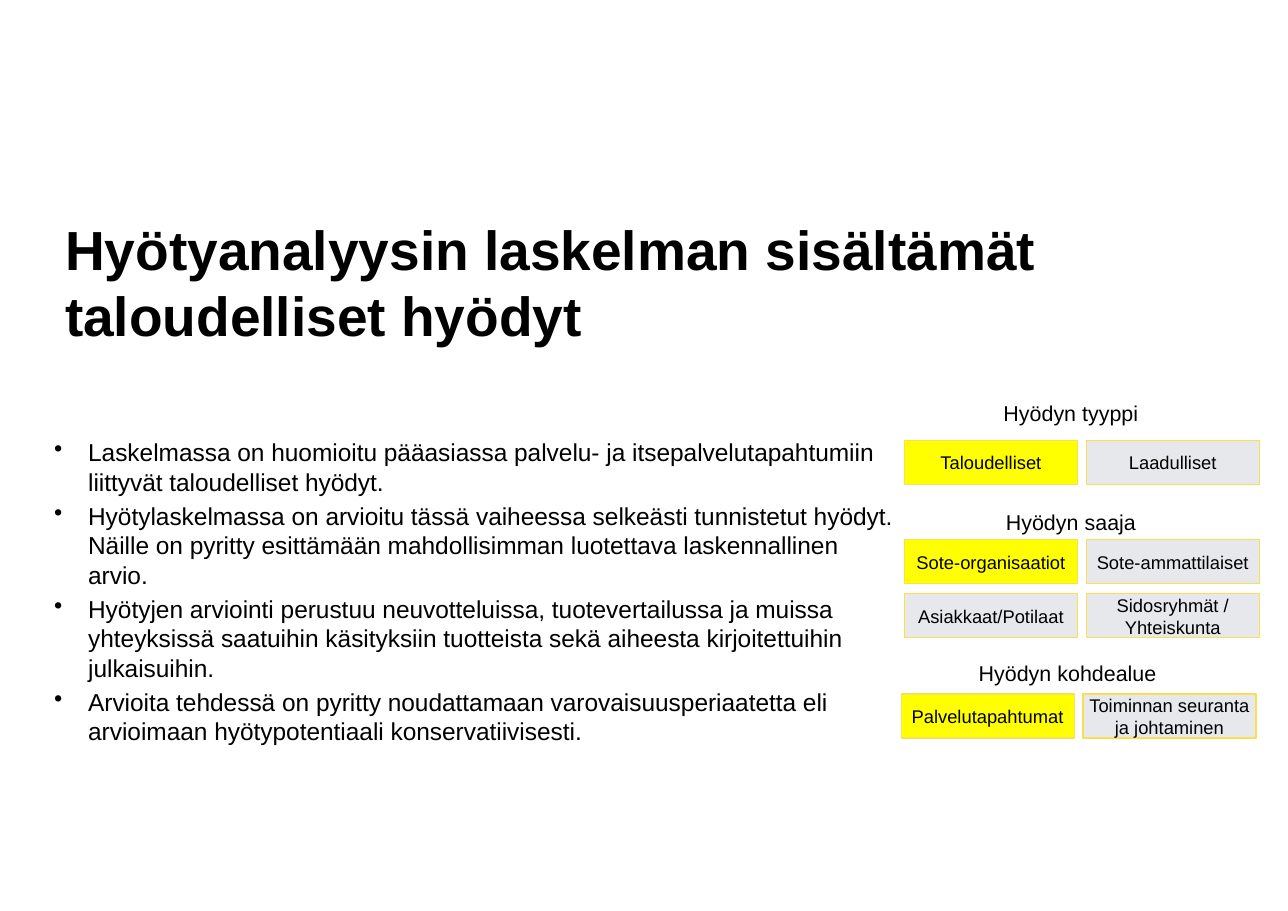
from pptx import Presentation
from pptx import util as u
from pptx.dml.color import RGBColor
from pptx.enum import shapes, text
from pptx.oxml import parse_xml
from pptx.oxml.ns import nsdecls

PX = 9144  # 100 px to the inch
BLACK = RGBColor(0x00, 0x00, 0x00)
YELLOW = RGBColor(0xFF, 0xFF, 0x00)
GREY = RGBColor(0xE7, 0xE8, 0xEC)
GOLD = RGBColor(0xFB, 0xDF, 0x53)

TITLE = "Hyötyanalyysin laskelman sisältämät taloudelliset hyödyt"
BULLETS = [
    "Laskelmassa on huomioitu pääasiassa palvelu- ja itsepalvelutapahtumiin liittyvät taloudelliset hyödyt.",
    "Hyötylaskelmassa on arvioitu tässä vaiheessa selkeästi tunnistetut hyödyt. "
    "Näille on pyritty esittämään mahdollisimman luotettava laskennallinen arvio.",
    "Hyötyjen arviointi perustuu neuvotteluissa, tuotevertailussa ja muissa yhteyksissä "
    "saatuihin käsityksiin tuotteista sekä aiheesta kirjoitettuihin julkaisuihin.",
    "Arvioita tehdessä on pyritty noudattamaan varovaisuusperiaatetta eli "
    "arvioimaan hyötypotentiaali konservatiivisesti.",
]
# Group left and top, heading, heading width, drop from heading to cells, rows
BENEFIT_GROUPS = [
    (821, 358, "Hyödyn tyyppi", 143, 42, [("Taloudelliset", "Laadulliset")]),
    (821, 457, "Hyödyn saaja", 139, 33, [("Sote-organisaatiot", "Sote-ammattilaiset"),
                                         ("Asiakkaat/Potilaat", "Sidosryhmät / Yhteiskunta")]),
    (818, 594, "Hyödyn kohdealue", 182, 36,
     [("Palvelutapahtumat", "Toiminnan seuranta ja johtaminen")]),
]
INCLUDED = {"Taloudelliset", "Sote-organisaatiot", "Palvelutapahtumat"}
CELL_WIDTH, CELL_HEIGHT = 157, 40
COLUMN_STEP, ROW_STEP = 165, 49
HEADING_CENTRE = 151


def px(*lengths):
    return [u.Emu(round(length * PX)) for length in lengths]


def write(shape, paragraphs, size, bold=False, align=text.PP_ALIGN.LEFT,
          anchor=text.MSO_ANCHOR.TOP, margins=(0, 0), wrap=True, bullet_indent=0, gap=0):
    frame = shape.text_frame
    frame.word_wrap = wrap
    frame.auto_size = text.MSO_AUTO_SIZE.NONE
    frame.vertical_anchor = anchor
    frame.margin_left = frame.margin_right = px(margins[0])[0]
    frame.margin_top = frame.margin_bottom = px(margins[1])[0]
    for index, content in enumerate(paragraphs):
        paragraph = frame.paragraphs[0] if index == 0 else frame.add_paragraph()
        paragraph.text = content
        paragraph.alignment = align
        paragraph.space_before = u.Pt(gap if index else 0)
        if bullet_indent:
            properties = paragraph._p.get_or_add_pPr()
            indent = px(bullet_indent)[0]
            properties.set("marL", str(indent))
            properties.set("indent", str(-indent))
            properties.append(parse_xml(f'<a:buChar {nsdecls("a")} char="•"/>'))
        font = paragraph.font
        font.name, font.size, font.bold = "Arial", u.Pt(size), bold
        font.color.rgb = BLACK


def place_title(slide, box):
    title = slide.shapes.title
    title.left, title.top, title.width, title.height = px(*box)
    write(title, [TITLE], 36, bold=True, anchor=text.MSO_ANCHOR.MIDDLE)


def add_bullets(slide, box):
    body = slide.shapes.add_textbox(*px(*box))
    write(body, BULLETS, 16, bullet_indent=31, gap=3.2)


def add_cell(slide, left, top, label):
    cell = slide.shapes.add_shape(shapes.MSO_SHAPE.RECTANGLE,
                                  *px(left, top, CELL_WIDTH, CELL_HEIGHT))
    cell.shadow.inherit = False
    cell.fill.solid()
    cell.fill.fore_color.rgb = YELLOW if label in INCLUDED else GREY
    cell.line.color.rgb = GOLD
    cell.line.width = u.Pt(0.75)
    write(cell, [label], 12, align=text.PP_ALIGN.CENTER, anchor=text.MSO_ANCHOR.MIDDLE)


def add_benefit_group(slide, left, top, heading, heading_width, drop, rows):
    heading_left = left + HEADING_CENTRE - heading_width / 2
    label = slide.shapes.add_textbox(*px(heading_left, top, heading_width, 34))
    write(label, [heading], 14, align=text.PP_ALIGN.CENTER, margins=(10, 5), wrap=False)
    for row, names in enumerate(rows):
        for column, name in enumerate(names):
            add_cell(slide, left + column * COLUMN_STEP, top + drop + row * ROW_STEP, name)


def main():
    presentation = Presentation()
    presentation.slide_width, presentation.slide_height = px(1169, 827)
    slide = presentation.slides.add_slide(presentation.slide_layouts[5])
    place_title(slide, (59, 216, 1051, 79))
    add_bullets(slide, (49, 397, 762, 418))
    for group in BENEFIT_GROUPS:
        add_benefit_group(slide, *group)
    presentation.save("out.pptx")


if __name__ == "__main__":
    main()
